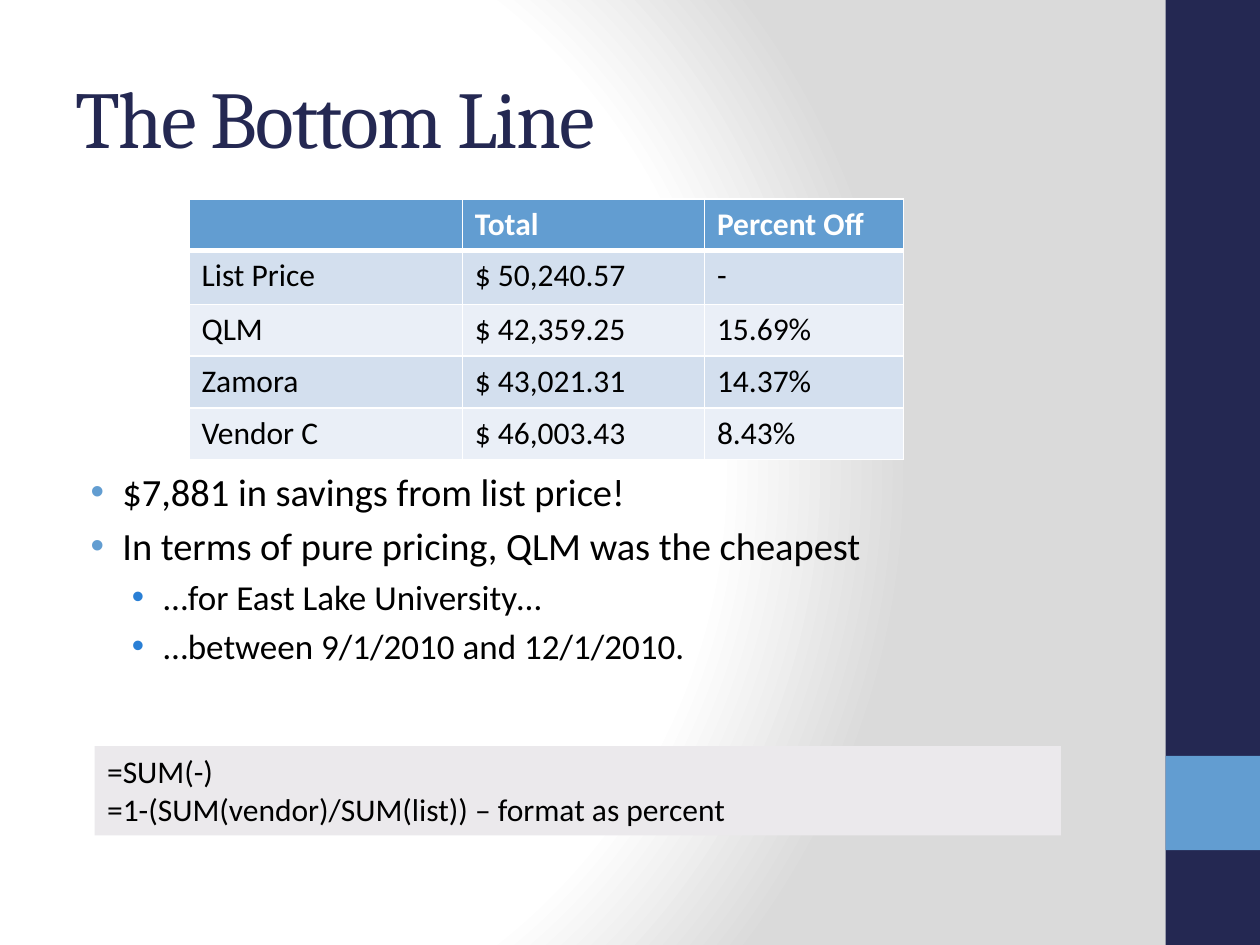
from pptx import Presentation
from pptx.dml.color import RGBColor
from pptx.enum.shapes import MSO_SHAPE
from pptx.enum.text import MSO_ANCHOR, PP_ALIGN
from pptx.oxml import parse_xml
from pptx.oxml.ns import nsdecls
from pptx.util import Cm, Pt

NAVY, BLUE, BRIGHT_BLUE = "242852", "629DD1", "297FD5"
WHITE, BLACK, PALE_GREY = "FFFFFF", "000000", "EBE9EC"
ROW_FILLS = ["D3DFEE", "EAEFF7"]
GLOW_STOPS = [(0, WHITE), (75, WHITE), (100, "DADADA")]

PRICES = [
    ("", "Total", "Percent Off"),
    ("List Price", "$ 50,240.57", "-"),
    ("QLM", "$ 42,359.25", "15.69%"),
    ("Zamora", "$ 43,021.31", "14.37%"),
    ("Vendor C", "$ 46,003.43", "8.43%"),
]
COLUMN_WIDTHS = [5.51, 4.88, 4.01]
ROW_HEIGHTS = [1.04, 1.09, 1.04, 1.04, 1.04]
FINDINGS = [
    (0, "$7,881 in savings from list price!"),
    (0, "In terms of pure pricing, QLM was the cheapest"),
    (1, "…for East Lake University…"),
    (1, "…between 9/1/2010 and 12/1/2010."),
]
LEVELS = [(0.95, 22, BLUE), (1.78, 20, BRIGHT_BLUE)]
FORMULAS = ["=SUM(-)", "=1-(SUM(vendor)/SUM(list)) – format as percent"]


def rgb(hex_color):
    """Return the colour for a hex string."""
    return RGBColor.from_string(hex_color)


def add_run(paragraph, text, size, color=BLACK, font="Calibri", bold=False):
    """Add one formatted run to a paragraph and return it."""
    run = paragraph.add_run()
    run.text = text
    run.font.size = Pt(size)
    run.font.name = font
    run.font.bold = bold
    run.font.color.rgb = rgb(color)
    return run


def next_paragraph(frame, index):
    """Return the first paragraph of a frame, or a new one after it."""
    return frame.add_paragraph() if index else frame.paragraphs[0]


def add_text_frame(slide, left, top, width, height):
    """Add a wrapping text box and return its frame."""
    box = slide.shapes.add_textbox(Cm(left), Cm(top), Cm(width), Cm(height))
    box.text_frame.word_wrap = True
    return box.text_frame


def add_block(slide, left, top, width, height, color):
    """Add a plain filled rectangle."""
    block = slide.shapes.add_shape(
        MSO_SHAPE.RECTANGLE, Cm(left), Cm(top), Cm(width), Cm(height))
    block.shadow.inherit = False
    block.fill.solid()
    block.fill.fore_color.rgb = rgb(color)
    block.line.fill.background()
    return block


def set_background(slide):
    """Give the slide a circular white-to-grey gradient."""
    stops = "".join(
        f'<a:gs pos="{position * 1000}"><a:srgbClr val="{color}"/></a:gs>'
        for position, color in GLOW_STOPS)
    slide.element.cSld.insert(0, parse_xml(
        f'<p:bg {nsdecls("p", "a")}><p:bgPr><a:gradFill rotWithShape="1">'
        f'<a:gsLst>{stops}</a:gsLst><a:path path="circle">'
        '<a:fillToRect l="20000" t="50000" r="100000" b="50000"/></a:path>'
        '</a:gradFill><a:effectLst/></p:bgPr></p:bg>'))


def add_title(slide, text):
    """Add the slide title with slightly tightened letters."""
    frame = add_text_frame(slide, 1.27, 0.76, 21.16, 3.18)
    frame.vertical_anchor = MSO_ANCHOR.MIDDLE
    run = add_run(frame.paragraphs[0], text, 46, NAVY, "Cambria")
    run.font._element.set("spc", "-100")


def set_bullet(paragraph, margin, color):
    """Give a paragraph a hanging coloured bullet."""
    properties = paragraph._p.get_or_add_pPr()
    properties.set("marL", str(Cm(margin)))
    properties.set("indent", str(-Cm(0.64)))
    for content in (f'<a:buClr {nsdecls("a")}><a:srgbClr val="{color}"/></a:buClr>',
                    f'<a:buFont {nsdecls("a")} typeface="Arial"/>',
                    f'<a:buChar {nsdecls("a")} char="•"/>'):
        properties.append(parse_xml(content))


def add_findings(slide):
    """Add the two-level bullet list."""
    frame = add_text_frame(slide, 1.27, 9.32, 21.16, 8.46)
    for index, (level, text) in enumerate(FINDINGS):
        margin, size, color = LEVELS[level]
        paragraph = next_paragraph(frame, index)
        paragraph.level = level
        paragraph.space_before = Pt(size * 0.2)
        set_bullet(paragraph, margin, color)
        add_run(paragraph, text, size)


def add_formulas(slide):
    """Add the shaded box of spreadsheet formulas."""
    frame = add_block(slide, 1.91, 15.04, 19.48, 1.8, PALE_GREY).text_frame
    frame.word_wrap = True
    frame.vertical_anchor = MSO_ANCHOR.TOP
    for index, formula in enumerate(FORMULAS):
        paragraph = next_paragraph(frame, index)
        paragraph.alignment = PP_ALIGN.LEFT
        add_run(paragraph, formula, 18)


def set_borders(cell, top, bottom):
    """Draw white cell borders with the given top and bottom points."""
    properties = cell._tc.get_or_add_tcPr()
    for index, (side, points) in enumerate(
            [("L", 1), ("R", 1), ("T", top), ("B", bottom)]):
        properties.insert(index, parse_xml(
            f'<a:ln{side} {nsdecls("a")} w="{Pt(points)}"><a:solidFill>'
            f'<a:srgbClr val="{WHITE}"/></a:solidFill></a:ln{side}>'))


def add_price_table(slide):
    """Add the table of vendor totals and discounts."""
    table = slide.shapes.add_table(
        len(PRICES), len(COLUMN_WIDTHS), Cm(3.81), Cm(4.01),
        Cm(sum(COLUMN_WIDTHS)), Cm(sum(ROW_HEIGHTS))).table
    for column, width in zip(table.columns, COLUMN_WIDTHS):
        column.width = Cm(width)
    for index, (row, height) in enumerate(zip(table.rows, ROW_HEIGHTS)):
        row.height = Cm(height)
        header = index == 0
        for cell, text in zip(row.cells, PRICES[index]):
            cell.fill.solid()
            cell.fill.fore_color.rgb = rgb(
                BLUE if header else ROW_FILLS[(index - 1) % 2])
            set_borders(cell, 3 if index == 1 else 1, 3 if header else 1)
            if text:
                add_run(cell.text_frame.paragraphs[0], text, 18,
                        WHITE if header else BLACK, bold=header)


def main():
    """Build the slide and save it."""
    presentation = Presentation()
    presentation.slide_width = Cm(25.4)
    presentation.slide_height = Cm(19.05)
    slide = presentation.slides.add_slide(presentation.slide_layouts[6])
    set_background(slide)
    add_block(slide, 23.5, 0, 1.9, 19.05, NAVY)
    add_block(slide, 23.5, 15.24, 1.9, 1.9, BLUE)
    add_title(slide, "The Bottom Line")
    add_findings(slide)
    add_formulas(slide)
    add_price_table(slide)
    presentation.save("out.pptx")


if __name__ == "__main__":
    main()
